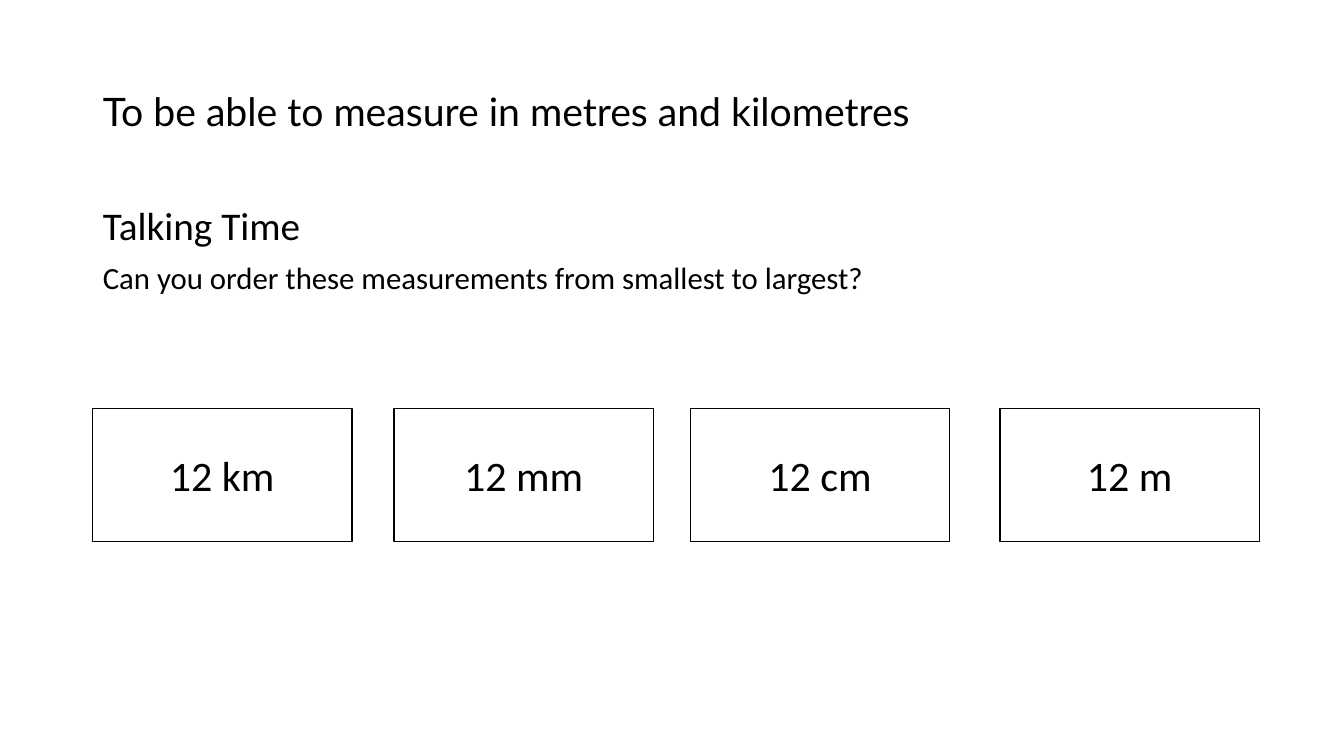
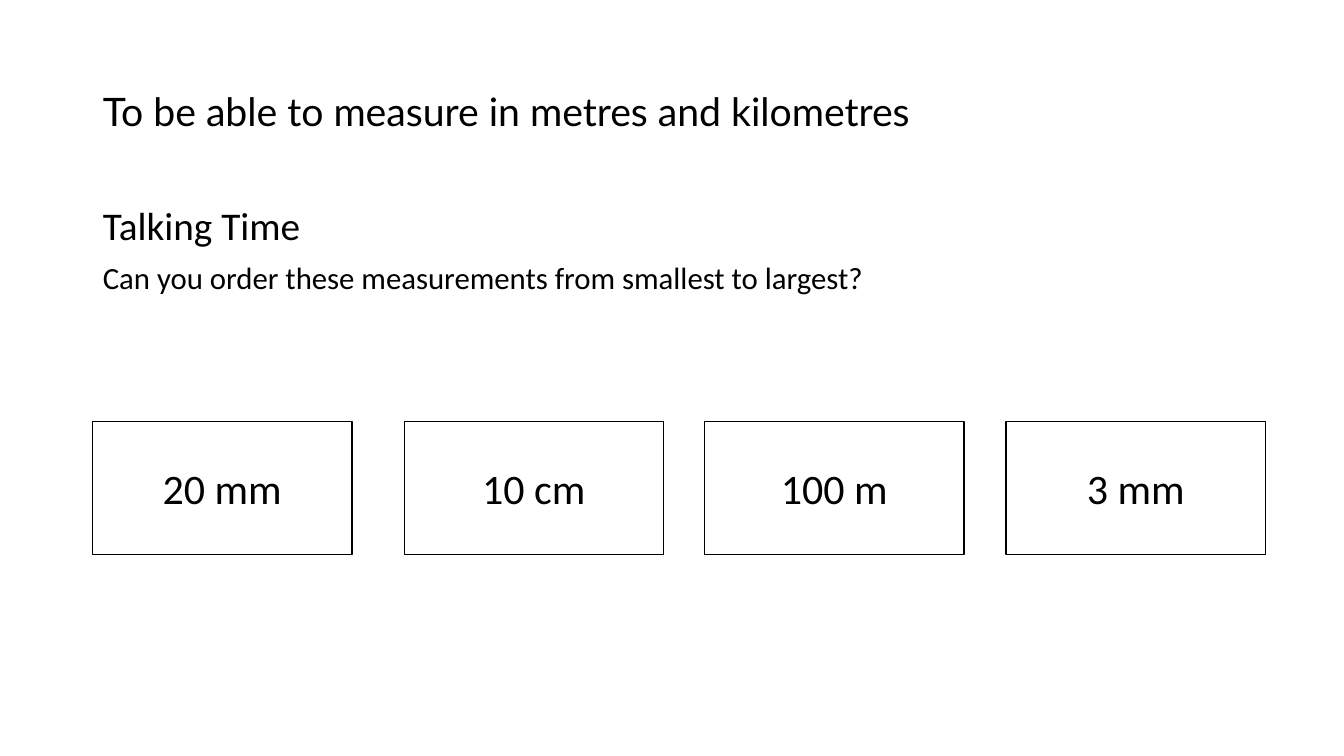
"""Build two slides that ask pupils to order measurements."""
from lxml import etree
from pptx import Presentation
from pptx.dml.color import RGBColor
from pptx.enum.shapes import MSO_SHAPE
from pptx.enum.text import MSO_ANCHOR, MSO_AUTO_SIZE, PP_ALIGN
from pptx.oxml.ns import qn
from pptx.util import Inches, Pt

RECT = MSO_SHAPE.RECTANGLE
MIDDLE, TOP = MSO_ANCHOR.MIDDLE, MSO_ANCHOR.TOP
NO_FIT = MSO_AUTO_SIZE.NONE
LEFT, CENTER = PP_ALIGN.LEFT, PP_ALIGN.CENTER

COLORS = {"paper": "FFFFFF", "ink": "000000"}
TITLE = "To be able to measure in metres and kilometres"
HEADING = "Talking Time"
QUESTION = "Can you order these measurements from smallest to largest?"
SLIDES = [
    {"top": 4.05, "cards": [("12 km", 0.92), ("12 mm", 3.91),
                            ("12 cm", 6.85), ("12 m", 9.92)]},
    {"top": 4.18, "cards": [("20 mm", 0.92), ("10 cm", 4.01),
                            ("100 m", 6.99), ("3 mm", 9.98)]},
]
TITLE_BOX = (0.92, 0.4, 9.6, 1.45)
BODY_BOX = (0.92, 2, 12.08, 4.76)
CARD_W, CARD_H = 2.57, 1.32


def color(name):
    return RGBColor.from_string(COLORS[name])


def place(sp, box):
    sp.left, sp.top, sp.width, sp.height = [Inches(v) for v in box]


def write(p, text, size, font="Calibri", align=LEFT, spacing=0.9, before=0):
    p.alignment, p.line_spacing, p.space_before = align, spacing, Pt(before)
    r = p.add_run()
    r.text = text
    r.font.name, r.font.size = font, Pt(size)
    r.font.color.rgb = color("ink")


def remove_bullet(p):
    pPr = p._p.get_or_add_pPr()
    pPr.set("marL", "0")
    pPr.set("indent", "0")
    etree.SubElement(pPr, qn("a:buNone"))


def add_card(s, text, left, top):
    sp = s.shapes.add_shape(RECT, *[Inches(v) for v in (left, top, CARD_W, CARD_H)])
    sp.shadow.inherit = False
    sp.fill.solid()
    sp.fill.fore_color.rgb = color("paper")
    sp.line.color.rgb = color("ink")
    sp.line.width = Pt(1)
    tf = sp.text_frame
    tf.vertical_anchor = MIDDLE
    write(tf.paragraphs[0], text, 30, align=CENTER, spacing=1.0)


def add_slide(prs, layout, top, cards):
    s = prs.slides.add_slide(layout)
    title, body = s.shapes.title.text_frame, s.placeholders[1].text_frame
    for tf, anchor in ((title, MIDDLE), (body, TOP)):
        tf.vertical_anchor, tf.auto_size = anchor, NO_FIT
    write(title.paragraphs[0], TITLE, 28, font="Lato")
    heading, question = body.paragraphs[0], body.add_paragraph()
    for p in (heading, question):
        remove_bullet(p)
    write(heading, HEADING, 28)
    write(question, QUESTION, 22, before=10)
    for text, left in cards:
        add_card(s, text, left, top)


def main():
    prs = Presentation()
    prs.slide_width, prs.slide_height = Inches(13.33), Inches(7.5)
    layout = prs.slide_layouts[1]
    for sp, box in zip(layout.placeholders, (TITLE_BOX, BODY_BOX)):
        place(sp, box)
    for content in SLIDES:
        add_slide(prs, layout, **content)
    prs.save("out.pptx")


if __name__ == "__main__":
    main()
